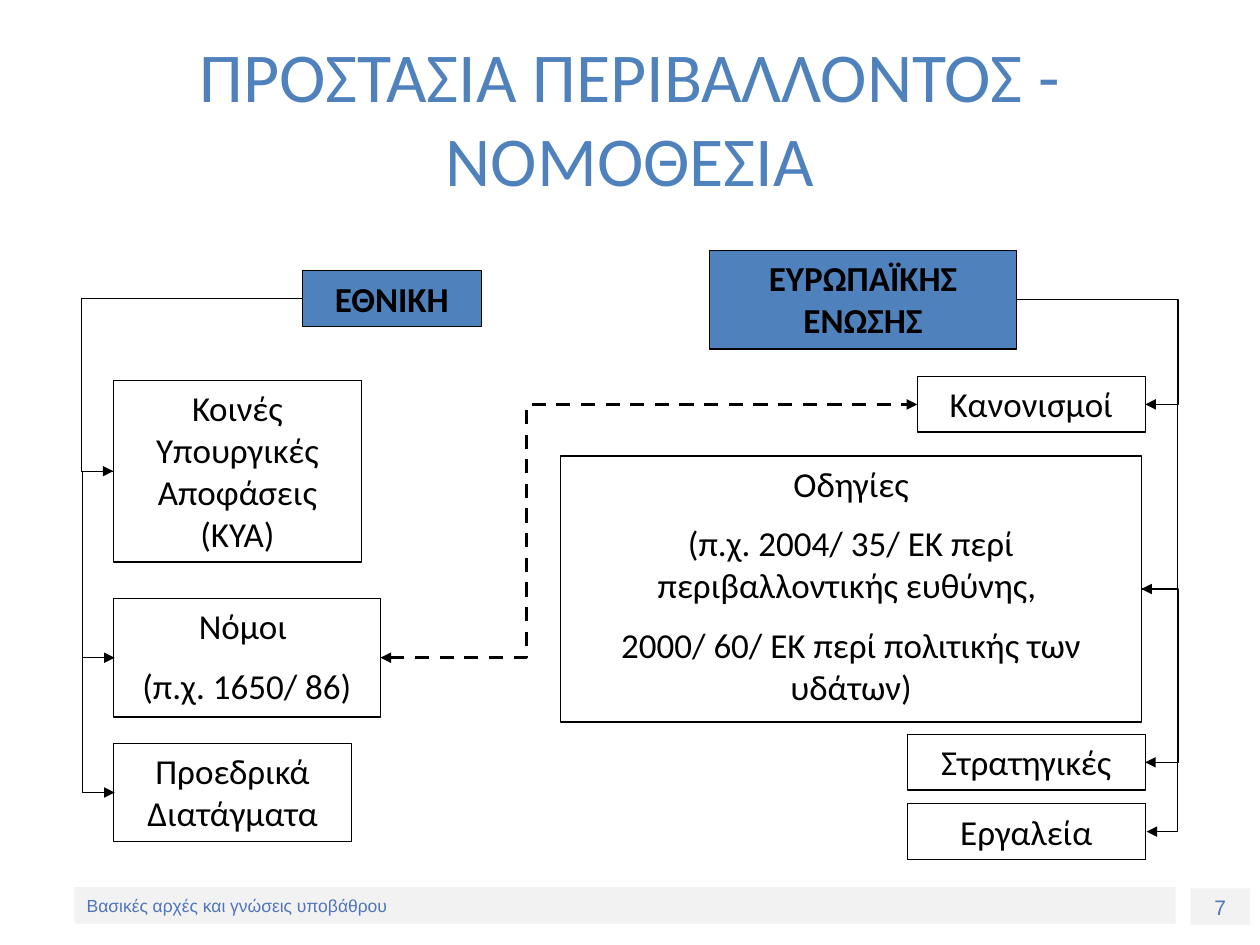
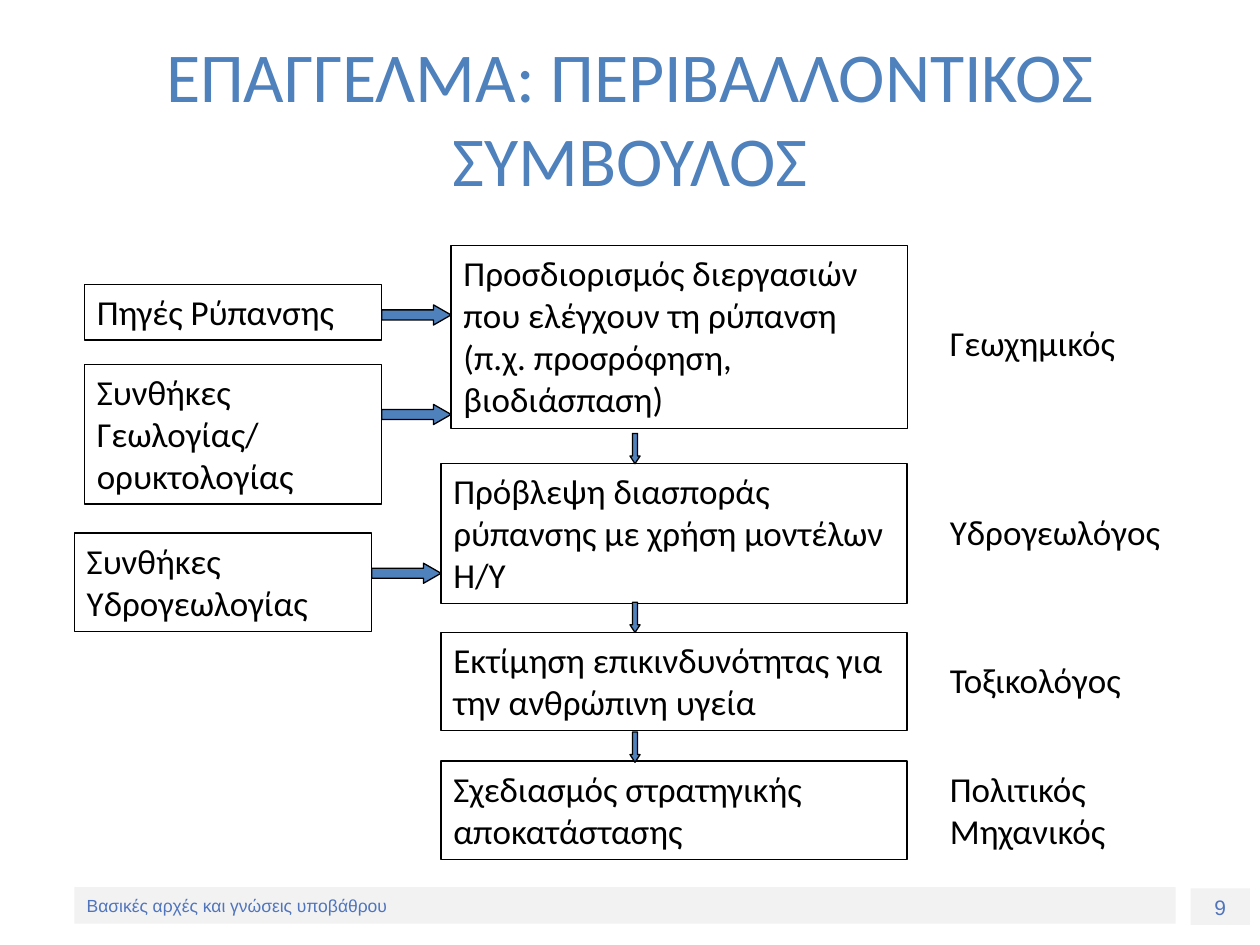
from dataclasses import dataclass
from typing import NamedTuple

from lxml import etree
from pptx import Presentation
from pptx.dml.color import RGBColor
from pptx.enum.dml import MSO_LINE
from pptx.enum.shapes import MSO_CONNECTOR, MSO_SHAPE
from pptx.enum.text import MSO_ANCHOR, MSO_AUTO_SIZE, PP_ALIGN
from pptx.oxml.ns import qn
from pptx.util import Inches, Pt

RECT, RIGHT, DOWN = MSO_SHAPE.RECTANGLE, MSO_SHAPE.RIGHT_ARROW, MSO_SHAPE.DOWN_ARROW
ELBOW = MSO_CONNECTOR.ELBOW
DASH = MSO_LINE.DASH
TOP, MIDDLE = MSO_ANCHOR.TOP, MSO_ANCHOR.MIDDLE
LEFT, CENTER = PP_ALIGN.LEFT, PP_ALIGN.CENTER
GROW = MSO_AUTO_SIZE.SHAPE_TO_FIT_TEXT

# The slide is a grid of 100 columns by 75 rows with square cells.
COLS, ROWS = 100, 75
CELL = Inches(10) // COLS
WEST, EAST = 1, 3  # connection sites of a rectangle


class Font(NamedTuple):
    name: str
    size: int
    color: RGBColor
    bold: bool = False


@dataclass(frozen=True)
class Theme:
    blue: RGBColor = RGBColor(0x4F, 0x81, 0xBD)
    ink: RGBColor = RGBColor(0, 0, 0)
    gray: RGBColor = RGBColor(0xF2, 0xF2, 0xF2)
    note: RGBColor = RGBColor(0x50, 0x75, 0xBC)
    thin: float = 0.75
    thick: float = 2
    gap: int = 10

    @property
    def title(self) -> Font:
        return Font("Calibri", 40, self.blue)

    @property
    def body(self) -> Font:
        return Font("Calibri", 20, self.ink)

    @property
    def head(self) -> Font:
        return self.body._replace(bold=True)

    def small(self, size: int) -> Font:
        return Font("Arial", size, self.note)


THEME = Theme()


class Area(NamedTuple):
    col: float
    row: float
    wide: float
    high: float

    def emu(self) -> list[int]:
        return [round(part * CELL) for part in self]


class Box(NamedTuple):
    area: Area
    text: tuple[str, ...]
    head: bool = False
    frame: bool = True


class Link(NamedTuple):
    start: str
    end: str
    bend: float
    sides: tuple[int, int]
    cross: bool = False


def write(shape, paras, font: Font, align=LEFT, anchor=TOP) -> None:
    """Fill a shape with paragraphs; a newline inside one is a line break."""
    frame = shape.text_frame
    frame.word_wrap = True
    frame.vertical_anchor = anchor
    for i, words in enumerate(paras):
        para = frame.paragraphs[0] if i == 0 else frame.add_paragraph()
        para.alignment = align
        if i:
            para.space_before = Pt(THEME.gap)
        for j, line in enumerate(words.split("\n")):
            if j:
                para.add_line_break()
            run = para.add_run()
            run.text = line
            run.font.name, run.font.size = font.name, Pt(font.size)
            run.font.bold = font.bold
            run.font.color.rgb = font.color


def draw(slide, area: Area, kind=RECT, fill=None, line=True):
    shape = slide.shapes.add_shape(kind, *area.emu())
    shape.shadow.inherit = False
    if fill is None:
        shape.fill.background()
    else:
        shape.fill.solid()
        shape.fill.fore_color.rgb = fill
    if line:
        shape.line.color.rgb = THEME.ink
        shape.line.width = Pt(THEME.thin)
    else:
        shape.line.fill.background()
    return shape


def label(slide, box: Box, align):
    if box.frame:
        shape = draw(slide, box.area, fill=THEME.blue if box.head else None)
    else:
        shape = slide.shapes.add_textbox(*box.area.emu())
    write(shape, box.text, THEME.head if box.head else THEME.body, align)
    shape.text_frame.auto_size = GROW
    return shape


def arrow(slide, area: Area, kind, tip: float) -> None:
    shape = draw(slide, area, kind, THEME.blue)
    shape.adjustments[0], shape.adjustments[1] = 0.5, tip


def join(slide, shapes, link: Link) -> None:
    """Glue an elbow to two boxes, with its upright part at column link.bend."""
    line = slide.shapes.add_connector(ELBOW, 0, 0, 0, 0)
    line.begin_connect(shapes[link.start], link.sides[0])
    line.end_connect(shapes[link.end], link.sides[1])
    if abs(line.end_x - line.begin_x) < CELL // 10:
        # A bend is a share of the width, so the width must not be zero.
        line.end_x = line.begin_x + CELL // 10
    share = (link.bend * CELL - line.begin_x) / (line.end_x - line.begin_x)
    props = line._element.spPr
    guides = props.find(qn("a:prstGeom")).find(qn("a:avLst"))
    etree.SubElement(guides, qn("a:gd"), name="adj1", fmla=f"val {round(share * 100000)}")
    line.line.color.rgb = THEME.ink
    line.line.width = Pt(THEME.thick if link.cross else THEME.thin)
    if link.cross:
        line.line.dash_style = DASH
    stroke = props.find(qn("a:ln"))
    for end in ("a:headEnd", "a:tailEnd") if link.cross else ("a:tailEnd",):
        etree.SubElement(stroke, qn(end), type="triangle")
    etree.SubElement(props, qn("a:effectLst"))


def start(deck, title: str, number: int):
    """Add a blank slide with its title, footer band and number."""
    slide = deck.slides.add_slide(deck.slide_layouts[6])
    page = draw(slide, Area(94.5, 70.5, 4.7, 2.9), fill=THEME.gray, line=False)
    write(page, [str(number)], THEME.small(12), CENTER)
    band = draw(slide, Area(5.9, 70.4, 87.4, 2.9), fill=THEME.gray, line=False)
    write(band, ["Βασικές αρχές και γνώσεις υποβάθρου"], THEME.small(10), anchor=MIDDLE)
    head = slide.shapes.add_textbox(*Area(5, 3, 90, 12.5).emu())
    write(head, [title], THEME.title, CENTER, MIDDLE)
    return slide


LAWS = {
    "state": Box(Area(24, 21.5, 14.2, 4.4), ("ΕΘΝΙΚΗ",), head=True),
    "union": Box(Area(56.3, 19.9, 24.4, 7.8), ("ΕΥΡΩΠΑΪΚΗΣ ΕΝΩΣΗΣ",), head=True),
    "joint": Box(Area(9, 30.2, 19.7, 14.4), ("Κοινές Υπουργικές Αποφάσεις (ΚΥΑ)",)),
    "acts": Box(Area(9, 47.5, 21.2, 9.4), ("Νόμοι ", "(π.χ. 1650/ 86)")),
    "decrees": Box(Area(9, 59, 18.9, 7.8), ("Προεδρικά Διατάγματα",)),
    "rules": Box(Area(72.8, 29.9, 18.1, 4.4), ("Κανονισμοί",)),
    "orders": Box(Area(44.5, 36.2, 46.1, 21.1), (
        "Οδηγίες",
        "(π.χ. 2004/ 35/ ΕΚ περί περιβαλλοντικής ευθύνης, ",
        "2000/ 60/ ΕΚ περί πολιτικής των υδάτων)")),
    "plans": Box(Area(72, 58.3, 18.9, 4.4), ("Στρατηγικές",)),
    "tools": Box(Area(72, 63.8, 18.9, 4.4), ("Εργαλεία",)),
}
# Each chain runs from box to box down one side: side, column of the bend, boxes.
CHAINS = (
    (WEST, 6.5, ("state", "joint", "acts", "decrees")),
    (EAST, 93.5, ("union", "rules", "orders", "plans", "tools")),
)
CROSS = Link("acts", "rules", 41.8, (EAST, WEST), cross=True)

STEP, ROLE = 35, 74.4  # left columns of the steps and of the roles
TASKS = (
    Box(Area(6.7, 22.6, 23.6, 4.4), ("Πηγές Ρύπανσης",)),
    Box(Area(6.7, 28.9, 23.6, 11.1), ("Συνθήκες Γεωλογίας/ ορυκτολογίας",)),
    Box(Area(5.9, 42.3, 23.6, 7.8), ("Συνθήκες Υδρογεωλογίας",)),
    Box(Area(35.8, 19.5, 36.2, 14.5), (
        "Προσδιορισμός διεργασιών που ελέγχουν τη ρύπανση \n(π.χ. προσρόφηση, βιοδιάσπαση)",)),
    Box(Area(STEP, 36.8, 37, 11.1), ("Πρόβλεψη διασποράς ρύπανσης με χρήση μοντέλων Η/Υ",)),
    Box(Area(STEP, 50.2, 37, 7.8), ("Εκτίμηση επικινδυνότητας για την ανθρώπινη υγεία",)),
    Box(Area(STEP, 60.4, 37, 7.8), ("Σχεδιασμός στρατηγικής αποκατάστασης",)),
    Box(Area(ROLE, 25, 17.3, 4.3), ("Γεωχημικός",), frame=False),
    Box(Area(ROLE, 40, 21.3, 4.3), ("Υδρογεωλόγος",), frame=False),
    Box(Area(ROLE, 51.8, 18.9, 4.3), ("Τοξικολόγος",), frame=False),
    Box(Area(ROLE, 60.4, 16.2, 7.7), ("Πολιτικός Μηχανικός",), frame=False),
)
INPUTS = ((30.3, 24.2), (30.3, 32.1), (29.5, 44.7))
DROPS = (34.4, 47.8, 58.1)


def laws(deck) -> None:
    slide = start(deck, "ΠΡΟΣΤΑΣΙΑ ΠΕΡΙΒΑΛΛΟΝΤΟΣ - ΝΟΜΟΘΕΣΙΑ", 7)
    shapes = {key: label(slide, box, CENTER) for key, box in LAWS.items()}
    join(slide, shapes, CROSS)
    for side, bend, keys in CHAINS:
        for one, two in zip(keys, keys[1:]):
            join(slide, shapes, Link(one, two, bend, (side, side)))


def tasks(deck) -> None:
    slide = start(deck, "ΕΠΑΓΓΕΛΜΑ: ΠΕΡΙΒΑΛΛΟΝΤΙΚΟΣ ΣΥΜΒΟΥΛΟΣ", 9)
    for box in TASKS:
        label(slide, box, LEFT)
    for col, row in INPUTS:
        arrow(slide, Area(col, row, 5.5, 1.6), RIGHT, 0.87)
    for row in DROPS:
        arrow(slide, Area(50, row, 0.8, 2.4), DOWN, 0.76)


def main() -> None:
    deck = Presentation()
    deck.slide_width, deck.slide_height = COLS * CELL, ROWS * CELL
    laws(deck)
    tasks(deck)
    deck.save("out.pptx")


if __name__ == "__main__":
    main()
